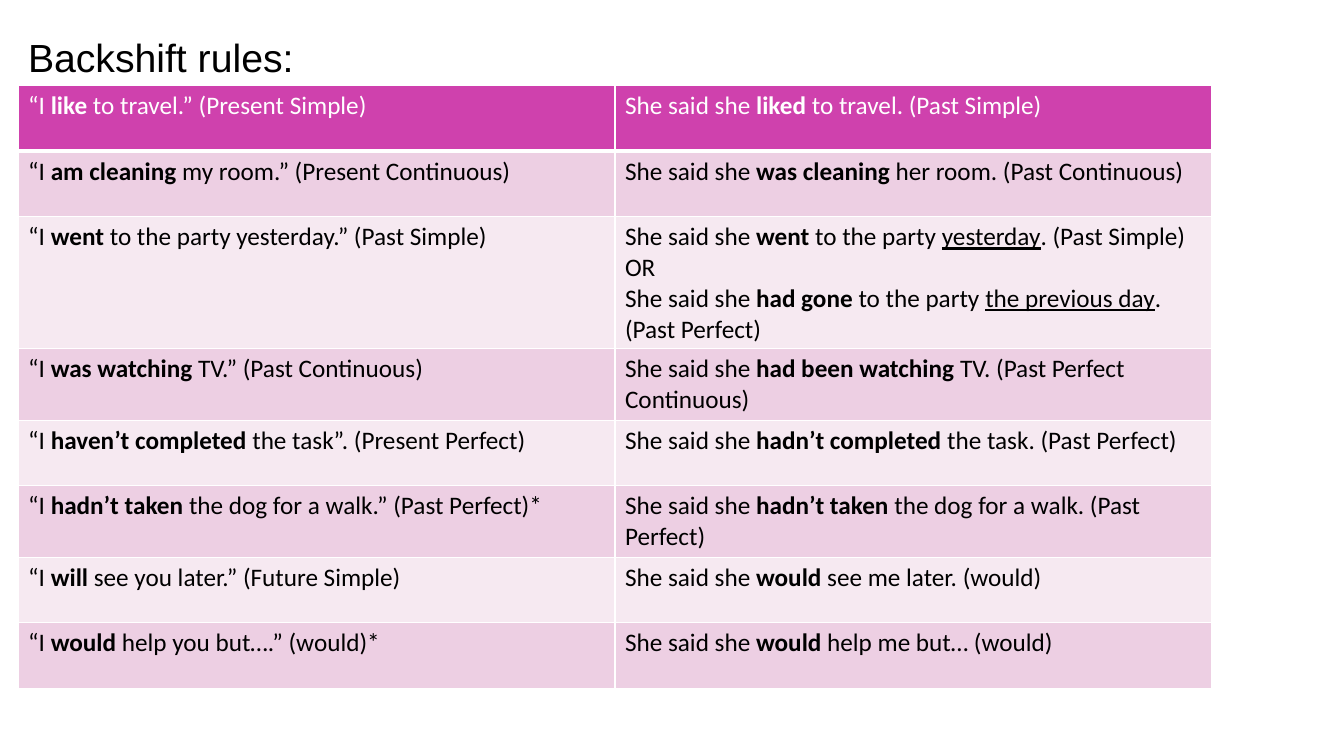
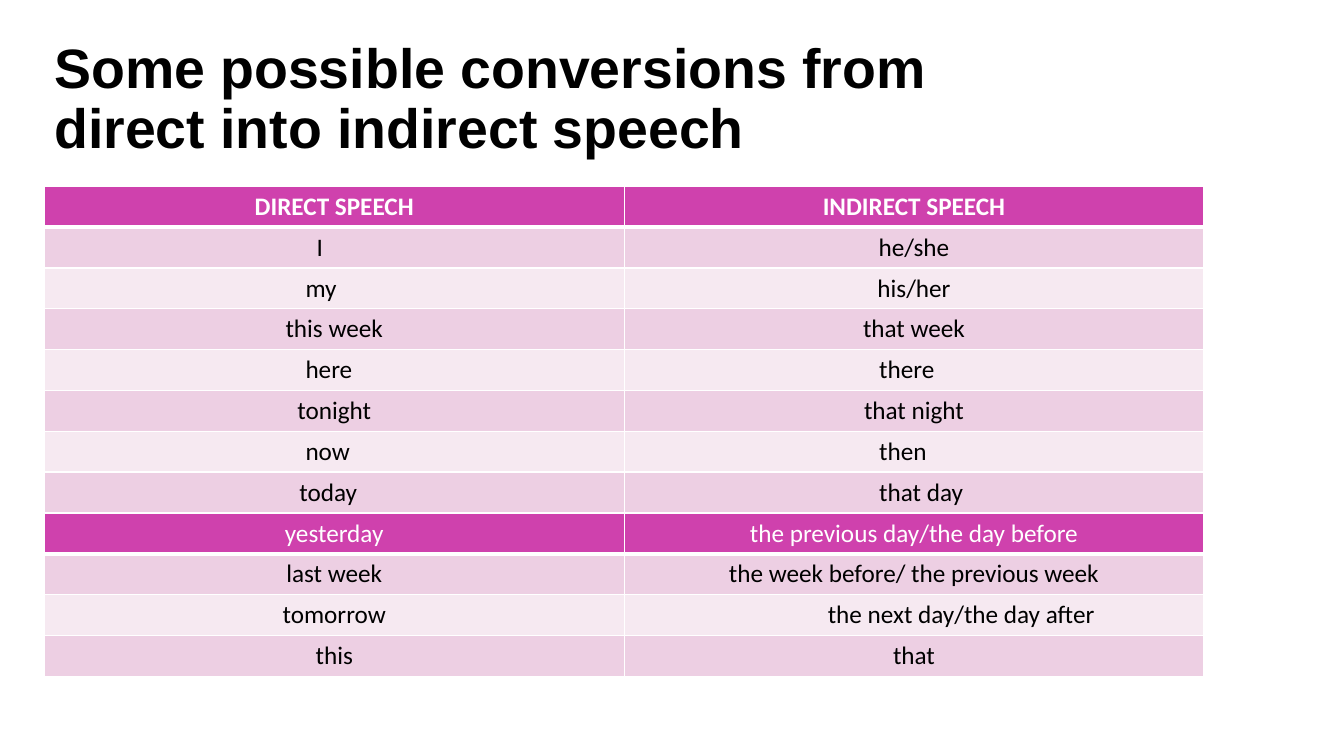
from dataclasses import dataclass

from lxml import etree
from pptx import Presentation
from pptx import util as u
from pptx.dml.color import RGBColor
from pptx.enum import text
from pptx.oxml.ns import qn

EMU_PER_PX = 9144  # 100 px to the inch
WHITE, BLACK = "FFFFFF", "000000"
HEADER_FILL = "CF41AD"
BAND_FILLS = ("F6E9F1", "EDCFE3")  # even rows, odd rows
TITLE_FONT, TABLE_FONT = "Arial", "Calibri"
TABLE_SIZE = 18
THIN, THICK = 1, 3


@dataclass
class Run:
    text: str
    bold: bool = False
    underline: bool = False


@dataclass
class Cell:
    paragraphs: list[list[Run]]
    centered: bool = False
    indent: int = 0


@dataclass
class Title:
    text: str
    box: tuple[int, int, int, int]
    size: float
    bold: bool
    anchor: text.MSO_ANCHOR


@dataclass
class Table:
    rows: list[tuple[Cell, Cell]]
    box: tuple[int, int, int, int]
    heights: tuple[int, ...] = ()  # empty means equal rows


def px(length: int) -> u.Emu:
    return u.Emu(length * EMU_PER_PX)


def color(value: str) -> RGBColor:
    return RGBColor.from_string(value)


# Cell contents

def sentence(opening: str, verb: str, ending: str) -> list[Run]:
    return [Run(opening), Run(verb, bold=True), Run(ending)]


def direct(verb: str, ending: str) -> Cell:
    return Cell([sentence("“I ", verb, ending)])


def reported(verb: str, ending: str) -> list[Run]:
    return sentence("She said she ", verb, ending)


def indirect(verb: str, ending: str) -> Cell:
    return Cell([reported(verb, ending)])


def word(label: str, indent: int = 0, bold: bool = False) -> Cell:
    """A centred word, or a left-aligned one when it has an indent."""
    return Cell([[Run(label, bold)]], centered=not indent, indent=indent)


# Drawing

def add_run(paragraph, run: Run, font_name: str, size: float, hue: str) -> None:
    added = paragraph.add_run()
    added.text = run.text
    font = added.font
    font.name, font.size = font_name, u.Pt(size)
    font.bold, font.underline = run.bold, run.underline
    font.color.rgb = color(hue)


def add_title(slide, title: Title) -> None:
    frame = slide.shapes.add_textbox(*map(px, title.box)).text_frame
    frame.word_wrap = True
    frame.vertical_anchor = title.anchor
    paragraph = frame.paragraphs[0]
    paragraph.line_spacing = 0.9
    add_run(paragraph, Run(title.text, title.bold), TITLE_FONT, title.size, BLACK)


def set_borders(cell, top: int, bottom: int) -> None:
    properties = cell._tc.get_or_add_tcPr()
    for side, width in (("L", THIN), ("R", THIN), ("T", top), ("B", bottom)):
        line = etree.SubElement(properties, qn(f"a:ln{side}"), w=str(u.Pt(width)))
        fill = etree.SubElement(line, qn("a:solidFill"))
        etree.SubElement(fill, qn("a:srgbClr"), val=WHITE)


def fill_cell(cell, content: Cell, row: int) -> None:
    is_header = row == 0
    set_borders(cell, THICK if row == 1 else THIN, THICK if is_header else THIN)
    cell.fill.solid()
    cell.fill.fore_color.rgb = color(HEADER_FILL if is_header else BAND_FILLS[row % 2])
    frame = cell.text_frame
    for number, runs in enumerate(content.paragraphs):
        paragraph = frame.add_paragraph() if number else frame.paragraphs[0]
        paragraph.alignment = text.PP_ALIGN.CENTER if content.centered else text.PP_ALIGN.LEFT
        if content.indent:
            paragraph._p.get_or_add_pPr().set("marL", str(px(content.indent)))
        for run in runs:
            add_run(paragraph, run, TABLE_FONT, TABLE_SIZE, WHITE if is_header else BLACK)


def add_table(slide, content: Table) -> None:
    table = slide.shapes.add_table(len(content.rows), 2, *map(px, content.box)).table
    table.first_row = table.horz_banding = False
    for row, height in zip(table.rows, content.heights):
        row.height = px(height)
    for row, pair in enumerate(content.rows):
        for column, cell in enumerate(pair):
            fill_cell(table.cell(row, column), cell, row)


# Slide contents

PAST_OPTIONS = Cell([
    [*reported("went", " to the party "), Run("yesterday", underline=True), Run(". (Past Simple)")],
    [Run("OR")],
    [*reported("had gone ", "to the party "), Run("the previous day", underline=True),
     Run(". (Past Perfect)")],
])

BACKSHIFT = Table([
    (direct("like", " to travel.” (Present Simple)"),
     indirect("liked", " to travel. (Past Simple)")),
    (direct("am cleaning ", "my room.” (Present Continuous)"),
     indirect("was cleaning ", "her room. (Past Continuous)")),
    (direct("went", " to the party yesterday.” (Past Simple)"), PAST_OPTIONS),
    (direct("was watching ", "TV.” (Past Continuous)"),
     indirect("had been watching ", "TV. (Past Perfect Continuous)")),
    (direct("haven’t completed ", "the task”. (Present Perfect)"),
     indirect("hadn’t completed ", "the task. (Past Perfect)")),
    (direct("hadn’t taken ", "the dog for a walk.” (Past Perfect)*"),
     indirect("hadn’t taken ", "the dog for a walk. (Past Perfect)")),
    (direct("will", " see you later.” (Future Simple)"),
     indirect("would", " see me later. (would)")),
    (direct("would", " help you but….” (would)*"),
     indirect("would", " help me but… (would)")),
], (18, 85, 1184, 595), (65, 65, 131, 71, 65, 71, 65, 65))

CONVERSIONS = Table([
    (word("DIRECT SPEECH", bold=True), word("INDIRECT SPEECH", bold=True)),
    (word("I", 260), word("he/she")),
    (word("my", 249), word("his/her")),
    (word("this week"), word("that week")),
    (word("here", 249), word("there", 243)),
    (word("tonight"), word("that night")),
    (word("now", 249), word("then", 243)),
    (word("today", 243), word("that day", 243)),
], (44, 185, 1150, 324))

TIME_CONVERSIONS = Table([
    (word("yesterday"), word("the previous day/the day before")),
    (word("last week"), word("the week before/ the previous week")),
    (word("tomorrow"), word("the next day/the day after", 192)),
    (word("this"), word("that")),
], (44, 509, 1150, 162))

SLIDES = [
    (Title("Backshift rules:", (18, 33, 1194, 50), 28, False, text.MSO_ANCHOR.TOP),
     [BACKSHIFT]),
    (Title("Some possible conversions from direct into indirect speech",
           (44, 14, 898, 171), 39.6, True, text.MSO_ANCHOR.MIDDLE),
     [CONVERSIONS, TIME_CONVERSIONS]),
]


def main() -> None:
    presentation = Presentation()
    presentation.slide_width, presentation.slide_height = px(1333), px(750)
    for title, tables in SLIDES:
        slide = presentation.slides.add_slide(presentation.slide_layouts[6])
        add_title(slide, title)
        for table in tables:
            add_table(slide, table)
    presentation.save("out.pptx")


if __name__ == "__main__":
    main()
